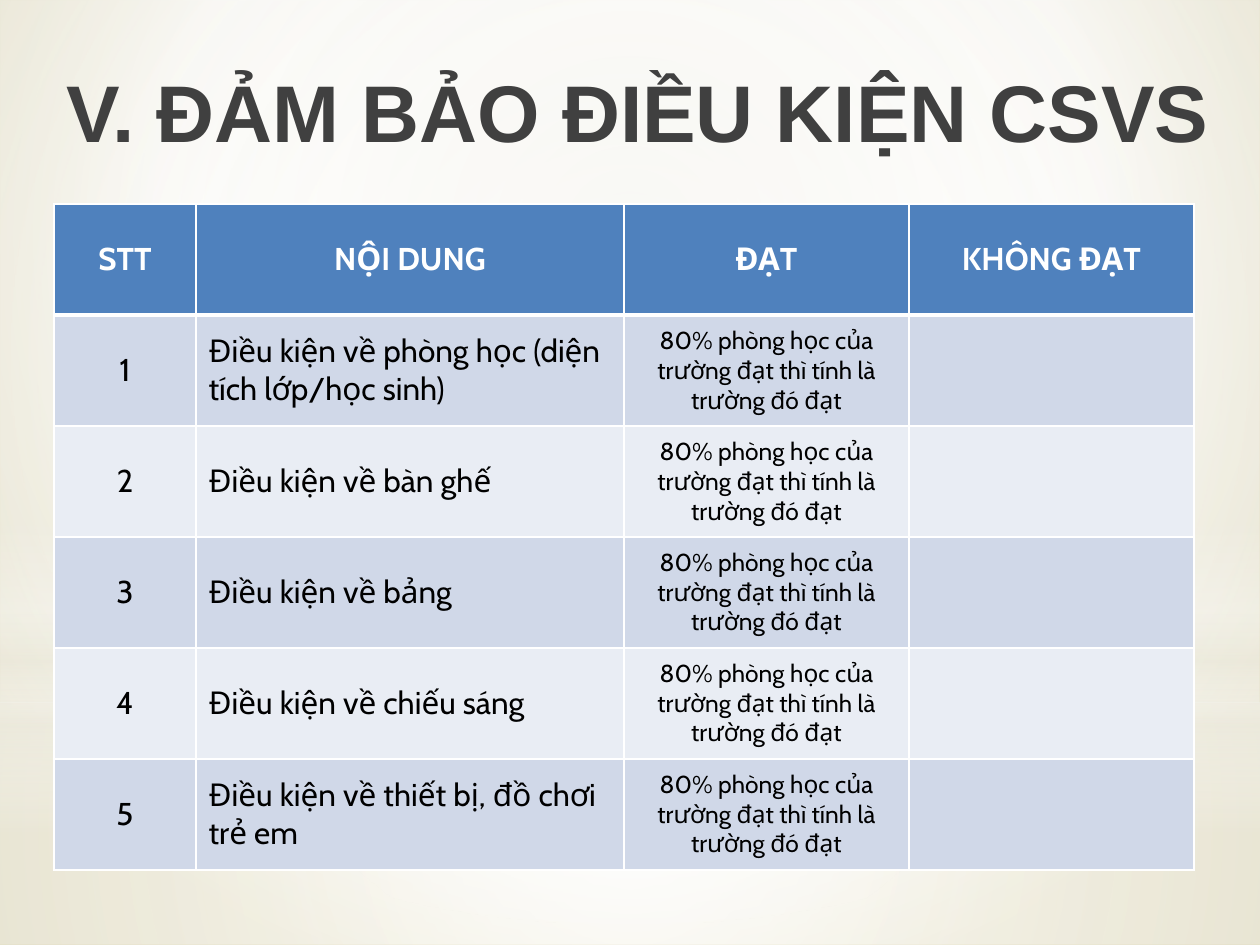
from lxml.etree import SubElement
from pptx import Presentation
from pptx.dml.color import RGBColor
from pptx.enum.shapes import MSO_SHAPE as Preset
from pptx.enum.text import MSO_ANCHOR as Anchor, PP_ALIGN as Align
from pptx.oxml.ns import qn
from pptx.util import Emu, Pt

EMU_PER_PX = 914400 / 126

COLORS = {
    "white": "FFFFFF",
    "cream": "EEECE1",
    "sand": "E7E4D4",
    "khaki": "D5CC9F",
    "title": "404040",
    "text": "000000",
    "header": "4F81BD",
    "odd_row": "D0D8E8",
    "even_row": "E9EDF4",
}

TITLE = "V. ĐẢM BẢO ĐIỀU KIỆN CSVS"
HEADERS = ["STT", "NỘI DUNG", "ĐẠT", "KHÔNG ĐẠT"]
CONDITIONS = [
    "Điều kiện về phòng học (diện tích lớp/học sinh)",
    "Điều kiện về bàn ghế",
    "Điều kiện về bảng",
    "Điều kiện về chiếu sáng",
    "Điều kiện về thiết bị, đồ chơi trẻ em",
]
PASS_RULE = "80% phòng học của trường đạt thì tính là trường đó đạt"

COLUMN_WIDTHS = [142, 428, 285, 285]
ROW_HEIGHT = 111
CENTER = (50, 50, 50, 50)

# Preset, box, gradient stops (position, colour, opacity), focus
GLOWS = [
    (Preset.RECTANGLE, (0, 703, 1260, 242),
     [(0, "white", 91), (37, "white", 76), (100, "cream", 79)], CENTER),
    (Preset.RECTANGLE, (0, 0, 1260, 703),
     [(0, "white", 89), (48, "white", 62), (100, "cream", 79)], CENTER),
    (Preset.RECTANGLE, (0, 519, 1260, 315),
     [(0, "white", 0), (29, "white", 30), (45, "cream", 40),
      (55, "white", 26), (65, "cream", 60), (100, "white", 0)], None),
    (Preset.OVAL, (0, 221, 1260, 703),
     [(0, "white", 100), (56, "white", 0)], CENTER),
]


def px(length):
    return Emu(round(length * EMU_PER_PX))


def rgb(name):
    return RGBColor.from_string(COLORS[name])


def set_gradient(fill, properties, stops, focus):
    """Fill with a circular gradient around focus, or a vertical one without it."""
    fill.solid()
    solid = properties.find(qn("a:solidFill"))
    gradient = solid.makeelement(qn("a:gradFill"), {"rotWithShape": "1"})
    properties.replace(solid, gradient)
    stop_list = SubElement(gradient, qn("a:gsLst"))
    for position, color, opacity in stops:
        stop = SubElement(stop_list, qn("a:gs"), pos=str(position * 1000))
        value = SubElement(stop, qn("a:srgbClr"), val=COLORS[color])
        if opacity < 100:
            SubElement(value, qn("a:alpha"), val=str(opacity * 1000))
    if focus:
        circle = SubElement(gradient, qn("a:path"), path="circle")
        sides = {side: str(share * 1000) for side, share in zip("ltrb", focus)}
        SubElement(circle, qn("a:fillToRect"), sides)
    else:
        SubElement(gradient, qn("a:lin"), ang="5400000", scaled="0")


def paint_background(slide):
    fill = slide.background.fill
    fill.solid()
    properties = slide.element.cSld.find(qn("p:bg")).find(qn("p:bgPr"))
    stops = [(0, "sand", 100), (60, "white", 100), (100, "khaki", 100)]
    set_gradient(fill, properties, stops, (20, 10, 20, 60))


def add_glow(slide, preset, box, stops, focus):
    glow = slide.shapes.add_shape(preset, *map(px, box))
    glow.shadow.inherit = False
    glow.line.fill.background()
    set_gradient(glow.fill, glow.element.spPr, stops, focus)


def add_run(paragraph, text, font_name, size, color, bold=False):
    run = paragraph.add_run()
    run.text = text
    font = run.font
    font.name, font.size, font.bold = font_name, Pt(size), bold
    font.color.rgb = rgb(color)


def add_title(slide):
    frame = slide.shapes.add_textbox(*map(px, (39, 55, 1191, 110))).text_frame
    frame.word_wrap = True
    frame.vertical_anchor = Anchor.MIDDLE
    heading = frame.paragraphs[0]
    heading.alignment = Align.CENTER
    heading.space_before, heading.space_after = Pt(9), Pt(3)
    heading._p.get_or_add_pPr().set("marL", str(px(6)))
    add_run(heading, TITLE, "Arial", 45.9, "title", bold=True)


def set_borders(cell, bottom_width):
    properties = cell._tc.get_or_add_tcPr()
    widths = {"a:lnL": 1, "a:lnR": 1, "a:lnT": 1, "a:lnB": bottom_width}
    for index, (tag, width) in enumerate(widths.items()):
        border = properties.makeelement(qn(tag), {"w": str(Pt(width))})
        fill = SubElement(border, qn("a:solidFill"))
        SubElement(fill, qn("a:srgbClr"), val=COLORS["white"])
        properties.insert(index, border)


def fill_cell(cell, text, fill, size=18, color="text", bold=False,
              align=Align.CENTER, bottom_width=1):
    cell.fill.solid()
    cell.fill.fore_color.rgb = rgb(fill)
    cell.vertical_anchor = Anchor.MIDDLE
    set_borders(cell, bottom_width)
    if text:
        paragraph = cell.text_frame.paragraphs[0]
        paragraph.alignment = align
        add_run(paragraph, text, "Cabin", size, color, bold)


def add_conditions_table(slide):
    row_count = len(CONDITIONS) + 1
    box = (54, 204, sum(COLUMN_WIDTHS), row_count * ROW_HEIGHT)
    table = slide.shapes.add_table(
        row_count, len(HEADERS), *map(px, box)).table
    for column, width in zip(table.columns, COLUMN_WIDTHS):
        column.width = px(width)
    for row in table.rows:
        row.height = px(ROW_HEIGHT)

    for column, header in enumerate(HEADERS):
        fill_cell(table.cell(0, column), header, "header",
                  color="white", bold=True, bottom_width=3)
    for number, condition in enumerate(CONDITIONS, start=1):
        band = "odd_row" if number % 2 else "even_row"
        order, content, passed, failed = table.rows[number].cells
        fill_cell(order, str(number), band)
        fill_cell(content, condition, band, align=Align.LEFT)
        fill_cell(passed, PASS_RULE, band, size=14)
        fill_cell(failed, "", band)


def main():
    deck = Presentation()
    deck.slide_width, deck.slide_height = px(1260), px(945)
    slide = deck.slides.add_slide(deck.slide_layouts[6])
    paint_background(slide)
    for glow in GLOWS:
        add_glow(slide, *glow)
    add_title(slide)
    add_conditions_table(slide)
    deck.save("out.pptx")


if __name__ == "__main__":
    main()
